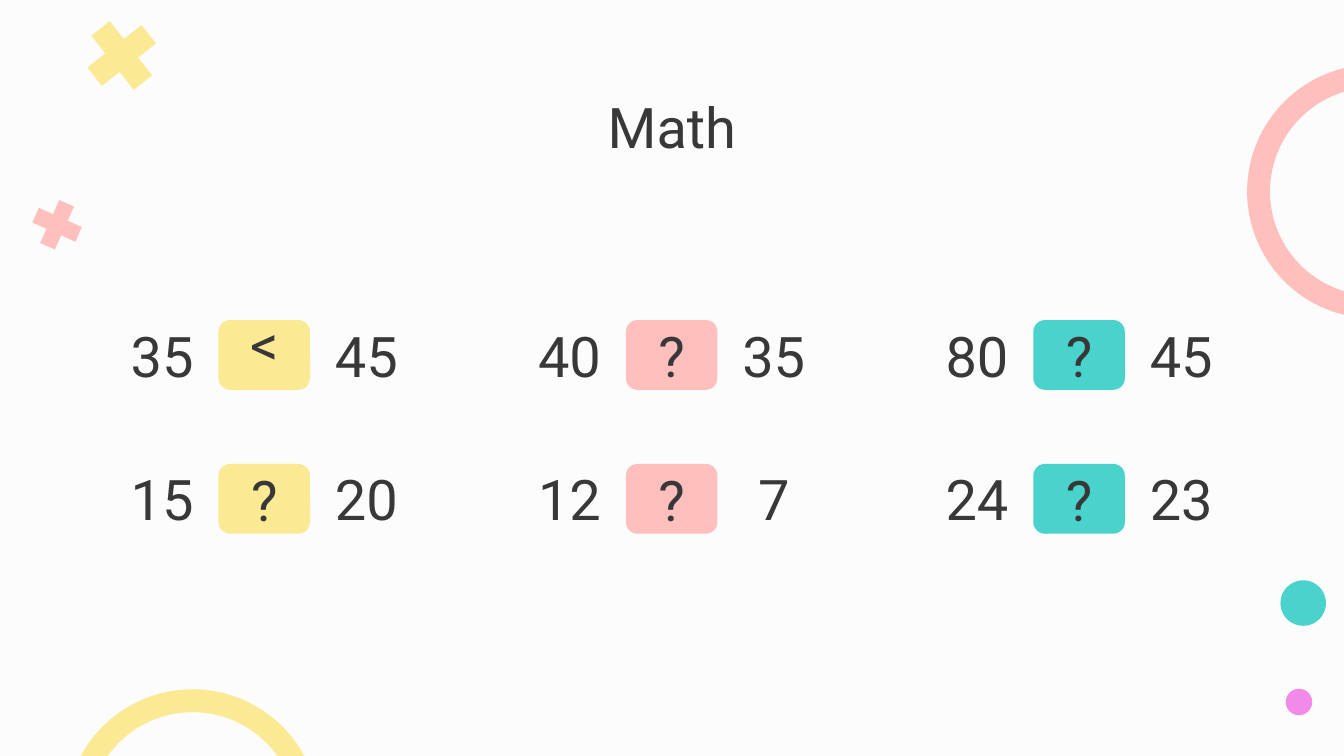
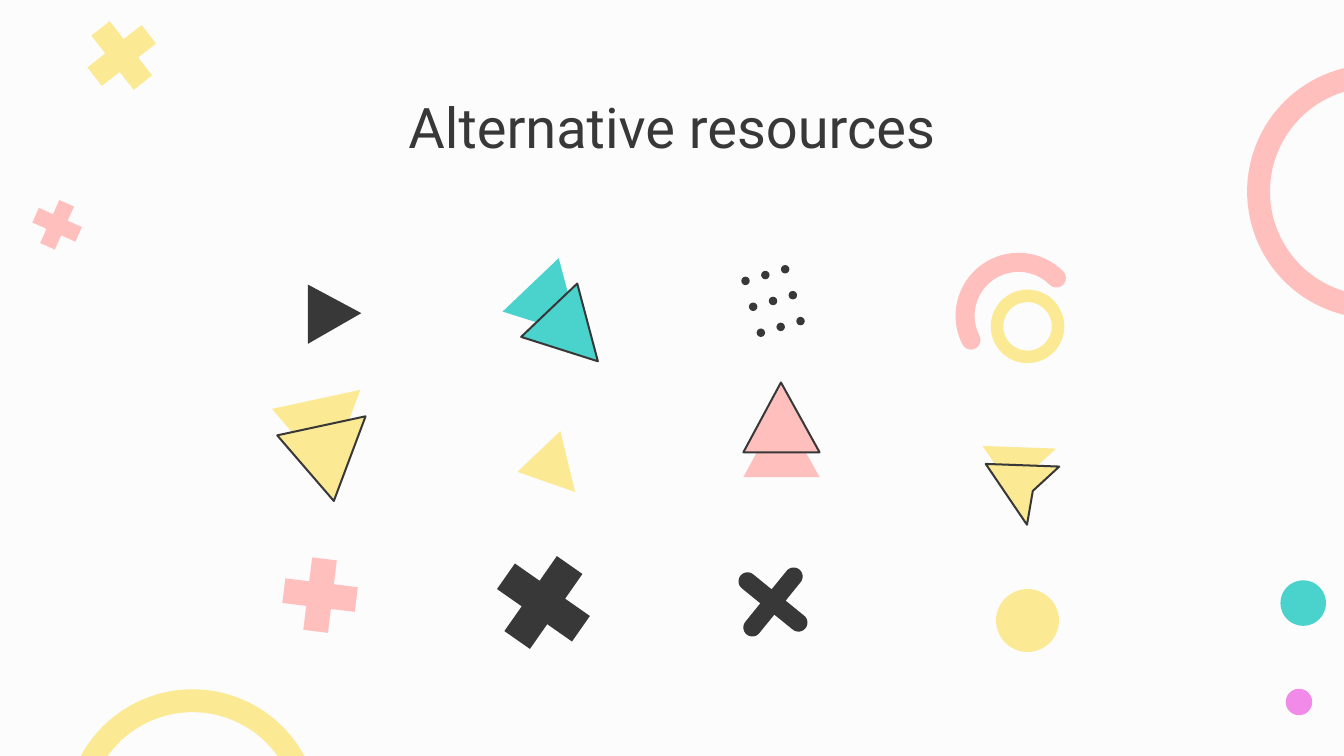
from dataclasses import dataclass
from itertools import product
from math import cos, radians, sin, sqrt

from pptx import Presentation
from pptx.dml.color import RGBColor
from pptx.enum.shapes import MSO_SHAPE as Preset
from pptx.enum.text import MSO_ANCHOR as Anchor, PP_ALIGN as Align
from pptx.util import Cm, Pt

Point = tuple[float, float]

PAPER = RGBColor(0xFC, 0xFC, 0xFC)
INK = RGBColor(0x38, 0x38, 0x38)
YELLOW = RGBColor(0xFB, 0xE9, 0x94)
PINK = RGBColor(0xFF, 0xBF, 0xBD)
TEAL = RGBColor(0x4A, 0xD2, 0xCD)
VIOLET = RGBColor(0xF1, 0x8A, 0xE8)
FONT = "Roboto"


@dataclass(frozen=True)
class Mark:
    """A square preset shape placed by its centre."""
    kind: Preset
    center: Point
    size: float
    color: RGBColor
    rotation: float = 0
    adjust: float | None = None


@dataclass(frozen=True)
class Comparison:
    left: str
    sign: str
    right: str


@dataclass(frozen=True)
class LayeredShape:
    """A plain outline with an outlined twin moved by shift on top."""
    points: list[Point]
    shift: Point
    color: RGBColor


DECORATIONS = [
    Mark(Preset.DONUT, (25.97, 3.62), 4.8, PINK, adjust=0.09),
    Mark(Preset.DONUT, (3.64, 15.43), 4.8, YELLOW, adjust=0.09),
    Mark(Preset.CROSS, (1.08, 4.25), 0.89, PINK, 24, 0.33),
    Mark(Preset.CROSS, (2.3, 1.05), 1.3, YELLOW, 52, 0.33),
    Mark(Preset.OVAL, (24.55, 13.27), 0.5, VIOLET),
    Mark(Preset.OVAL, (24.63, 11.4), 0.86, TEAL),
]

COLUMN_COLORS = [YELLOW, PINK, TEAL]
COMPARISON_ROWS = [
    [Comparison("35", "<", "45"), Comparison("40", "?", "35"), Comparison("80", "?", "45")],
    [Comparison("15", "?", "20"), Comparison("12", "?", "7"), Comparison("24", "?", "23")],
]
GRID_LEFT, GRID_TOP = 2.0, 5.82
COLUMN_STEP, ROW_STEP = 7.7, 2.72
NUMBER_WIDTH, TILE_WIDTH, BOX_HEIGHT = 2.13, 1.73, 1.32
TILE_DROP = 0.23

RESOURCE_MARKS = [
    Mark(Preset.CROSS, (10.27, 11.39), 1.73, INK, 35, 0.33),
    Mark(Preset.CROSS, (6.05, 11.25), 1.38, PINK, 7, 0.33),
    Mark(Preset.DONUT, (19.42, 6.17), 1.39, YELLOW, adjust=0.17),
    Mark(Preset.OVAL, (19.42, 11.73), 1.19, YELLOW),
]
LAYERED_SHAPES = [
    LayeredShape([(5.14, 7.73), (6.21, 8.97), (6.81, 7.37)], (0.1, 0.5), YELLOW),
    LayeredShape([(10.56, 4.88), (9.5, 5.89), (10.95, 6.35)], (0.35, 0.48), TEAL),
    LayeredShape([(14.76, 7.7), (14.05, 9.02), (15.49, 9.02)], (0, -0.47), PINK),
    LayeredShape([(18.57, 8.43), (19.35, 9.58), (19.46, 8.94), (19.96, 8.48)],
                 (0.06, 0.34), YELLOW),
]
YELLOW_TRIANGLE = [(10.59, 8.15), (9.78, 8.92), (10.87, 9.3)]
DARK_TRIANGLE = [(5.82, 5.38), (5.82, 6.5), (6.83, 5.92)]


def paint(shape, color: RGBColor, outline: RGBColor | None = None) -> None:
    shape.shadow.inherit = False
    shape.fill.solid()
    shape.fill.fore_color.rgb = color
    if outline is None:
        shape.line.fill.background()
    else:
        shape.line.color.rgb = outline
        shape.line.width = Pt(1.07)


def write(shape, text: str, *, size: float = 30, color: RGBColor = INK,
          anchor: Anchor = Anchor.TOP, align: Align = Align.CENTER) -> None:
    frame = shape.text_frame
    frame.word_wrap = True
    frame.vertical_anchor = anchor
    frame.margin_left = frame.margin_right = Cm(0.25)
    frame.margin_top = frame.margin_bottom = Cm(0.25)
    para = frame.paragraphs[0]
    para.alignment = align
    span = para.add_run()
    span.text = text
    span.font.name = FONT
    span.font.size = Pt(size)
    span.font.color.rgb = color


def add_text(page, left: float, top: float, width: float, text: str,
             anchor: Anchor = Anchor.TOP) -> None:
    box = page.shapes.add_textbox(Cm(left), Cm(top), Cm(width), Cm(BOX_HEIGHT))
    write(box, text, anchor=anchor)


def add_mark(shapes, mark: Mark) -> None:
    x, y = mark.center
    half = mark.size / 2
    shape = shapes.add_shape(mark.kind, Cm(x - half), Cm(y - half),
                             Cm(mark.size), Cm(mark.size))
    if mark.adjust is not None:
        shape.adjustments[0] = mark.adjust
    shape.rotation = mark.rotation
    paint(shape, mark.color)


def add_outline(shapes, points: list[Point], color: RGBColor,
                outline: RGBColor | None = None) -> None:
    corners = [(Cm(x), Cm(y)) for x, y in points]
    builder = shapes.build_freeform(*corners[0])
    builder.add_line_segments(corners[1:], close=True)
    paint(builder.convert_to_shape(), color, outline)


def polar(center: Point, radius: float, angle: float) -> Point:
    return (center[0] + radius * cos(radians(angle)),
            center[1] + radius * sin(radians(angle)))


def arc(center: Point, radius: float, start: float, end: float,
        steps: int = 16) -> list[Point]:
    return [polar(center, radius, start + (end - start) * step / steps)
            for step in range(steps + 1)]


def rounded_cross(center: Point, reach: float, radius: float, tilt: float) -> list[Point]:
    """Four arms with round ends; reach runs from the centre to each end's centre."""
    points = []
    for angle in (tilt + 90 * arm for arm in range(4)):
        points += arc(polar(center, reach, angle), radius, angle - 90, angle + 90)
        points.append(polar(center, radius * sqrt(2), angle + 45))
    return points


def rounded_band(center: Point, radius: float, half: float,
                 start: float, end: float) -> list[Point]:
    """A curved band of twice the half width, with round ends."""
    return (arc(center, radius + half, start, end, 32)
            + arc(polar(center, radius, end), half, end, end + 180)
            + arc(center, radius - half, end, start, 32)
            + arc(polar(center, radius, start), half, start + 180, start + 360))


def add_layered_shape(page, item: LayeredShape) -> None:
    group = page.shapes.add_group_shape()
    dx, dy = item.shift
    add_outline(group.shapes, item.points, item.color)
    add_outline(group.shapes, [(x + dx, y + dy) for x, y in item.points], item.color, INK)


def add_dot_grid(page) -> None:
    group = page.shapes.add_group_shape()
    for row, column in product(range(3), repeat=2):
        center = (14.09 + 0.375 * column + 0.145 * row,
                  5.31 - 0.11 * column + 0.49 * row)
        add_mark(group.shapes, Mark(Preset.OVAL, center, 0.16, INK))


def add_page(deck, title: str):
    page = deck.slides.add_slide(deck.slide_layouts[6])
    for mark in DECORATIONS:
        add_mark(page.shapes, mark)
    add_text(page, 2.0, 1.5, 21.4, title)
    return page


def add_comparison(page, left: float, top: float, item: Comparison, color: RGBColor) -> None:
    tile_left = left + NUMBER_WIDTH
    add_text(page, left, top, NUMBER_WIDTH, item.left)
    add_text(page, tile_left + TILE_WIDTH, top, NUMBER_WIDTH, item.right)
    tile = page.shapes.add_shape(Preset.ROUNDED_RECTANGLE, Cm(tile_left),
                                 Cm(top + TILE_DROP), Cm(TILE_WIDTH), Cm(BOX_HEIGHT))
    tile.adjustments[0] = 0.167
    paint(tile, color)
    if item.sign == "?":
        write(tile, item.sign, anchor=Anchor.MIDDLE)
    else:
        sign_left = tile_left - (NUMBER_WIDTH - TILE_WIDTH) / 2
        add_text(page, sign_left, top, NUMBER_WIDTH, item.sign, Anchor.MIDDLE)


def add_math_page(deck) -> None:
    page = add_page(deck, "Math")
    for column, color in enumerate(COLUMN_COLORS):
        for row, items in enumerate(COMPARISON_ROWS):
            add_comparison(page, GRID_LEFT + COLUMN_STEP * column,
                           GRID_TOP + ROW_STEP * row, items[column], color)


def add_resources_page(deck) -> None:
    page = add_page(deck, "Alternative resources")
    for mark in RESOURCE_MARKS:
        add_mark(page.shapes, mark)
    add_dot_grid(page)
    for item in LAYERED_SHAPES:
        add_layered_shape(page, item)
    add_outline(page.shapes, YELLOW_TRIANGLE, YELLOW)
    add_outline(page.shapes, DARK_TRIANGLE, INK)
    add_outline(page.shapes, rounded_cross((14.61, 11.38), 0.62, 0.17, 39), INK)
    add_outline(page.shapes, rounded_band((19.25, 5.97), 1.01, 0.18, 153, 315), PINK)


def main() -> None:
    deck = Presentation()
    deck.slide_width, deck.slide_height = Cm(25.4), Cm(14.29)
    background = deck.slide_master.background.fill
    background.solid()
    background.fore_color.rgb = PAPER
    add_math_page(deck)
    add_resources_page(deck)
    deck.save("out.pptx")


if __name__ == "__main__":
    main()
